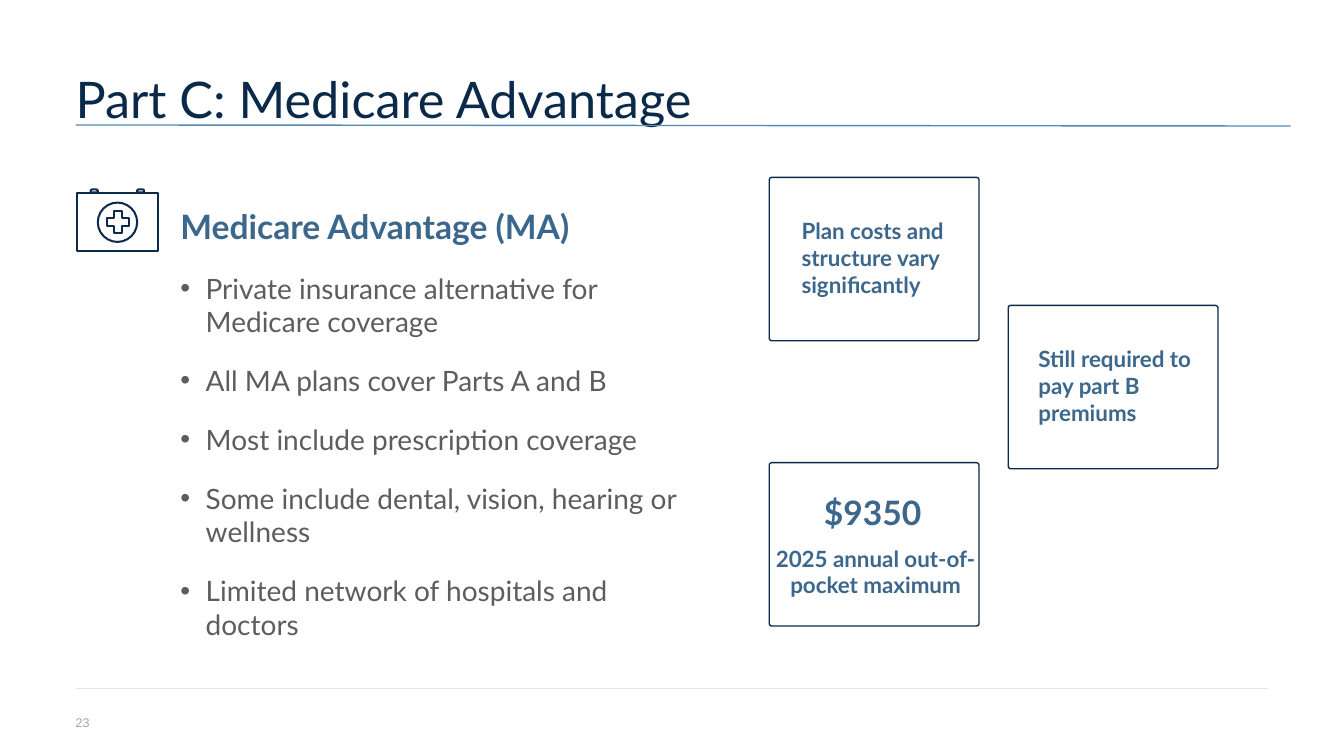
import math
from pptx import Presentation, util as u
from pptx.dml.color import RGBColor
from pptx.enum import shapes as s, text as t
from pptx.oxml.ns import qn
from lxml import etree

# Content
TITLE = "Part C: Medicare Advantage"
PAGE_NUMBER = "23"
HEADING = "Medicare Advantage (MA)"
BULLETS = [
    "Private insurance alternative for Medicare coverage",
    "All MA plans cover Parts A and B",
    "Most include prescription coverage",
    "Some include dental, vision, hearing or wellness",
    "Limited network of hospitals and doctors",
]
# Each card: left, top, then its texts as (text, style, dx, dy, width, height)
CARDS = [
    (7.63, 1.76, [("Plan costs and structure vary significantly",
                   "note", 0.32, 0.39, 1.53, 0.81)]),
    (10.00, 3.03, [("Still required to pay part B premiums",
                    "note", 0.30, 0.39, 1.67, 0.81)]),
    (7.63, 4.59, [("$9350", "amount", -0.02, 0.29, 2.09, 0.47),
                  ("2025 annual out-of-pocket maximum",
                   "caption", 0.02, 0.81, 2.07, 0.54)]),
]

# Theme
NAVY, BLUE, GRAY = "0B2949", "3C678C", "5C5E5B"
THEME = {
    "title": dict(name="Lato", size=36, bold=False, color=NAVY),
    "heading": dict(name="Lato", size=24, bold=True, color=BLUE),
    "bullet": dict(name="Lato", size=20, bold=False, color=GRAY),
    "note": dict(name="Lato", size=16, bold=True, color=BLUE),
    "caption": dict(name="Lato", size=16, bold=True, color=BLUE),
    "amount": dict(name="Lato", size=24, bold=True, color=BLUE),
    "page": dict(name="Arial", size=9, bold=False, color="9EA7B0"),
}
CENTERED = ("caption", "amount")
ANCHORS = {"note": t.MSO_ANCHOR.MIDDLE, "caption": t.MSO_ANCHOR.MIDDLE,
           "page": t.MSO_ANCHOR.BOTTOM}
MARGIN = 0.75
CARD_SIZE = (2.08, 1.62)
BULLET_INDENT = 0.25
ICON_LINE = 1.44

prs = Presentation()
prs.slide_width, prs.slide_height = u.Inches(13.33), u.Inches(7.5)
slide = prs.slides.add_slide(prs.slide_layouts[6])


def style_paragraph(paragraph, style):
    for key, value in THEME[style].items():
        if key == "color":
            paragraph.font.color.rgb = RGBColor.from_string(value)
        else:
            setattr(paragraph.font, key, u.Pt(value) if key == "size" else value)
    if style in CENTERED:
        paragraph.alignment = t.PP_ALIGN.CENTER


def add_text(text, style, *box):
    frame = slide.shapes.add_textbox(*map(u.Inches, box)).text_frame
    settings = dict(word_wrap=True, margin_left=0, margin_right=0, margin_top=0,
                    margin_bottom=0, vertical_anchor=ANCHORS.get(style, t.MSO_ANCHOR.TOP))
    for key, value in settings.items():
        setattr(frame, key, value)
    frame.text = text
    style_paragraph(frame.paragraphs[0], style)
    return frame


def add_bullet(frame, text):
    paragraph = frame.add_paragraph()
    paragraph.text = text
    paragraph.space_before = u.Pt(18)
    props = paragraph._p.get_or_add_pPr()
    props.set("marL", str(u.Inches(BULLET_INDENT)))
    props.set("indent", str(-u.Inches(BULLET_INDENT)))
    etree.SubElement(props, qn("a:buFont")).set("typeface", "Arial")
    etree.SubElement(props, qn("a:buChar")).set("char", "•")
    style_paragraph(paragraph, "bullet")


def outline(shape, width):
    shape.shadow.inherit = False
    shape.fill.background()
    shape.line.color.rgb = RGBColor.from_string(NAVY)
    shape.line.width = u.Pt(width)


def add_outlined(kind, box, width, *adjustments):
    shape = slide.shapes.add_shape(kind, *map(u.Inches, box))
    for i, value in enumerate(adjustments):
        shape.adjustments[i] = value
    outline(shape, width)


def add_rule(x1, y1, x2, y2, color, width):
    rule = slide.shapes.add_connector(s.MSO_CONNECTOR.STRAIGHT,
                                      *map(u.Inches, (x1, y1, x2, y2)))
    rule.line.color.rgb = RGBColor.from_string(color)
    rule.line.width = u.Pt(width)
    etree.SubElement(rule._element.spPr, qn("a:effectLst"))


# Footer and title
add_rule(MARGIN, 6.83, 12.58, 6.83, "E1E5E8", 0.5)
add_text(TITLE, "title", MARGIN, 0.74, 11.83, 1).paragraphs[0].line_spacing = 0.9
add_text(PAGE_NUMBER, "page", MARGIN, 7.09, 0.3, 0.15)

# Heading and bullets
body = add_text(HEADING, "heading", 1.79, 2.04, 4.96, 4.76)
for bullet in BULLETS:
    add_bullet(body, bullet)

# First-aid case: body, badge, cross, hinges
SHAPE = s.MSO_SHAPE
add_outlined(SHAPE.RECTANGLE, (0.76, 1.91, 0.81, 0.58), ICON_LINE)
add_outlined(SHAPE.OVAL, (0.97, 2.01, 0.39, 0.39), ICON_LINE)
add_outlined(SHAPE.CROSS, (1.06, 2.09, 0.22, 0.22), ICON_LINE, 0.33)
for hinge_left in (0.90, 1.36):
    add_outlined(SHAPE.ROUND_2_SAME_RECTANGLE, (hinge_left, 1.88, 0.07, 0.03),
                 ICON_LINE, 0.5, 0)

# Case handle: two rounded corners joined by straight sides
RADIUS, CORNER_Y, HANDLE_FOOT = 0.05, 1.82, 1.88
handle_points = [
    (center_x + RADIUS * math.cos(math.radians(angle)),
     CORNER_Y - RADIUS * math.sin(math.radians(angle)))
    for center_x, first in ((0.98, 180), (1.34, 90))
    for angle in range(first, first - 91, -15)
]
handle = slide.shapes.build_freeform(0.93, HANDLE_FOOT, scale=u.Inches(1))
handle.add_line_segments(handle_points + [(1.39, HANDLE_FOOT)], close=False)
outline(handle.convert_to_shape(), ICON_LINE)

# Cards
for left, top, texts in CARDS:
    add_outlined(SHAPE.ROUNDED_RECTANGLE, (left, top, *CARD_SIZE), 1, 0.015)
    for text, style, dx, dy, width, height in texts:
        add_text(text, style, left + dx, top + dy, width, height)

# Rule under the title
add_rule(MARGIN, 1.24, 12.8, 1.25, "5489B6", 1)

prs.save("out.pptx")
